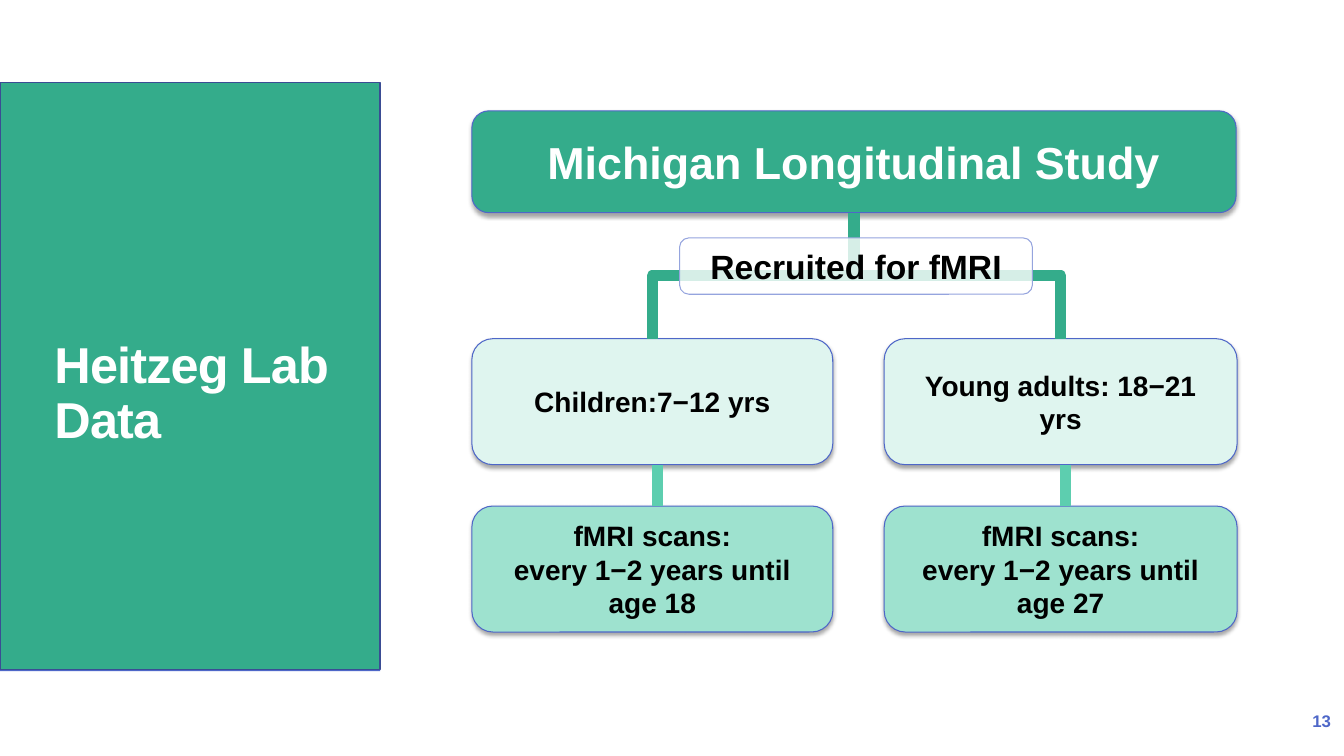
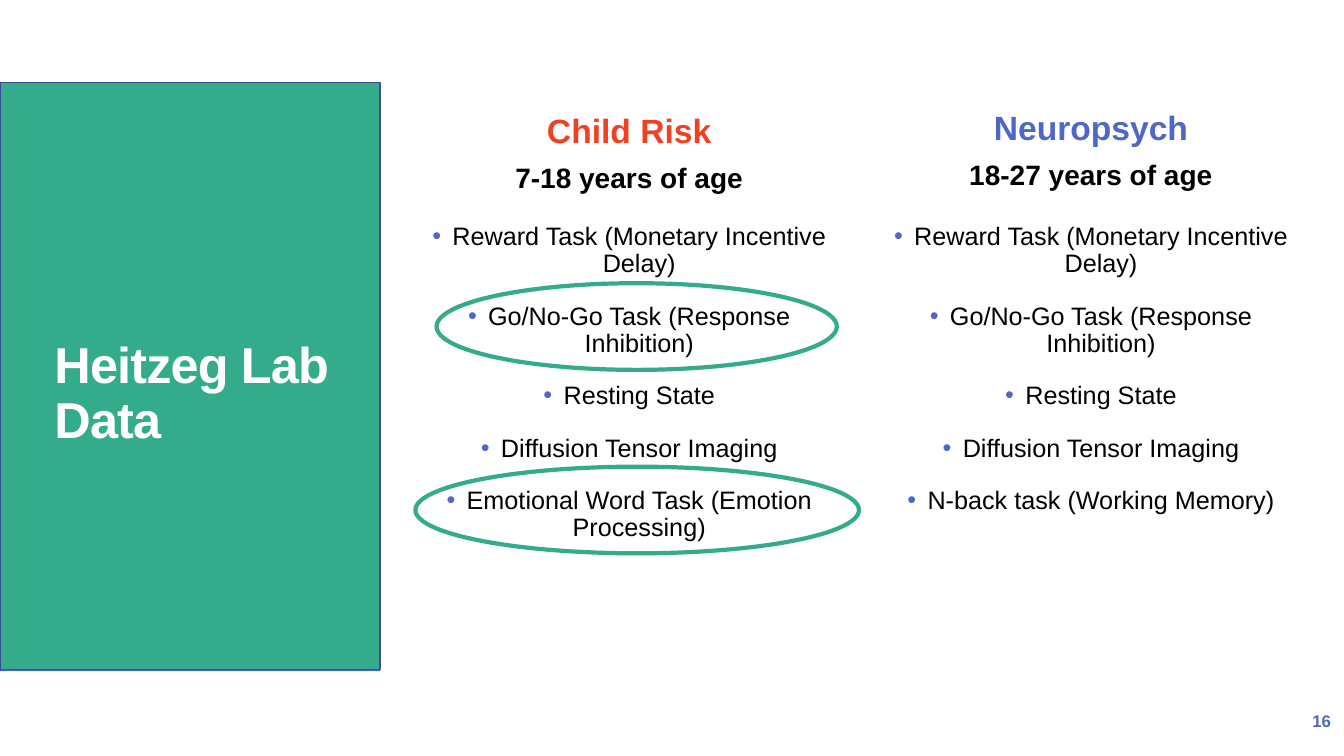
from lxml import etree
from pptx import Presentation
from pptx.dml.color import RGBColor
from pptx.enum.shapes import MSO_CONNECTOR, MSO_SHAPE
from pptx.enum.text import MSO_ANCHOR, MSO_AUTO_SIZE, PP_ALIGN
from pptx.oxml.ns import qn
from pptx.util import Inches, Pt

# Shared look
GREEN = RGBColor(0x34, 0xAC, 0x8B)
MID_GREEN = RGBColor(0x5D, 0xCE, 0xAF)
SOFT_GREEN = RGBColor(0x9E, 0xE2, 0xCF)
PALE_GREEN = RGBColor(0xDF, 0xF5, 0xEF)
BLUE = RGBColor(0x4E, 0x67, 0xC8)
DARK_BLUE = RGBColor(0x3A, 0x4C, 0x94)
LIGHT_BLUE = RGBColor(0x95, 0xA4, 0xDE)
RED = RGBColor(0xF1, 0x41, 0x24)
WHITE = RGBColor(0xFF, 0xFF, 0xFF)
BLACK = RGBColor(0, 0, 0)

TITLE_FONT = {"size": Pt(36), "bold": True}
HEADER_FONT = {"size": Pt(32), "bold": True}
HEADING_FONT = {"size": Pt(24), "bold": True}
BOX_FONT = {"size": Pt(20), "bold": True}
BULLET_FONT = {"size": Pt(18), "bold": False}
NUMBER_FONT = {"size": Pt(12), "bold": True}

TITLE = "Heitzeg Lab Data"
BULLET_INDENT = Inches(0.2)
SHARED_TASKS = [
    "Reward Task (Monetary Incentive Delay)",
    "Go/No-Go Task (Response Inhibition)",
    "Resting State",
    "Diffusion Tensor Imaging",
]


def add_xml(parent, tag, **attributes):
    return etree.SubElement(parent, qn(tag), attributes)


def set_values(target, values):
    for name, value in values.items():
        setattr(target, name, value)


def write_line(frame, index, text, font, color, **paragraph_format):
    """Write one paragraph, using the frame's empty first one for index 0."""
    paragraph = frame.add_paragraph() if index else frame.paragraphs[0]
    set_values(paragraph, {"alignment": PP_ALIGN.CENTER, **paragraph_format})
    run = paragraph.add_run()
    run.text = text
    set_values(run.font, {"name": "Arial", **font})
    run.font.color.rgb = color
    return paragraph


def add_box(slide, kind, at, fill=None, line=None, line_width=0.75):
    box = slide.shapes.add_shape(kind, *map(Inches, at))
    box.shadow.inherit = False
    if fill is None:
        box.fill.background()
    else:
        box.fill.solid()
        box.fill.fore_color.rgb = fill
    if line is None:
        box.line.fill.background()
    else:
        set_values(box.line, {"width": Pt(line_width)})
        box.line.color.rgb = line
    return box


def add_text(slide, at, anchor=MSO_ANCHOR.TOP):
    frame = slide.shapes.add_textbox(*map(Inches, at)).text_frame
    set_values(frame, {"word_wrap": True, "vertical_anchor": anchor})
    return frame


def add_shadow(box):
    effects = box.element.spPr.find(qn("a:effectLst"))
    shadow = add_xml(effects, "a:outerShdw", blurRad=str(Pt(3.1)), dist=str(Pt(1.8)),
                     dir="5400000", rotWithShape="0")
    add_xml(add_xml(shadow, "a:srgbClr", val="000000"), "a:alpha", val="35000")


def add_study_box(slide, at, fill, lines, font=BOX_FONT, color=BLACK):
    box = add_box(slide, MSO_SHAPE.ROUNDED_RECTANGLE, at, fill, BLUE)
    add_shadow(box)
    set_values(box.text_frame, {"word_wrap": True, "vertical_anchor": MSO_ANCHOR.MIDDLE})
    for index, text in enumerate(lines):
        write_line(box.text_frame, index, text, font, color)
    return box


def add_link(slide, kind, color, start, end):
    link = slide.shapes.add_connector(kind, *start, *end)
    link.line.width = Pt(8)
    link.line.color.rgb = color
    add_xml(link.element.spPr, "a:effectLst")
    return link


def add_branch(slide, parent, child):
    """Elbow going down from the parent's bottom to the child's top."""
    start_x, start_y = parent.left + parent.width // 2, parent.top + parent.height
    end_x, end_y = child.left + child.width // 2, child.top
    branch = add_link(slide, MSO_CONNECTOR.ELBOW, GREEN, (start_x, start_y), (end_x, end_y))
    branch.begin_connect(parent, 2)
    branch.end_connect(child, 0)
    # A vertical elbow is a horizontal one turned by a quarter about its centre
    drop, spread = end_y - start_y, abs(end_x - start_x)
    set_values(branch, {
        "left": (start_x + end_x - drop) // 2,
        "top": (start_y + end_y - spread) // 2,
        "width": drop,
        "height": spread,
    })
    frame = branch.element.spPr.find(qn("a:xfrm"))
    for flip in ("flipH", "flipV"):
        frame.attrib.pop(flip, None)
    if end_x > start_x:
        frame.set("rot", "16200000")
        frame.set("flipH", "1")
    else:
        frame.set("rot", "5400000")


def add_slide(deck, number):
    """Slide with the green title panel and the page number."""
    slide = deck.slides.add_slide(deck.slide_layouts[5])
    title = slide.shapes.title
    panel_edge = add_box(slide, MSO_SHAPE.RECTANGLE, (0, 0.83, 3.77, 5.83), BLUE)
    panel = add_box(slide, MSO_SHAPE.RECTANGLE, (0, 0.82, 3.77, 5.82), GREEN, DARK_BLUE, 0.85)
    for band in (panel_edge, panel):
        title.element.addprevious(band.element)

    set_values(title, {"left": Inches(0.44), "top": Inches(1.4),
                       "width": Inches(3.22), "height": Inches(5.03)})
    set_values(title.text_frame, {"word_wrap": True, "auto_size": MSO_AUTO_SIZE.NONE,
                                  "vertical_anchor": MSO_ANCHOR.MIDDLE})
    heading = write_line(title.text_frame, 0, TITLE, TITLE_FONT, WHITE,
                         alignment=PP_ALIGN.LEFT, line_spacing=0.9)
    heading.runs[0]._r.get_or_add_rPr().set("spc", "-60")

    page = add_text(slide, (11.63, 6.95, 1.67, 0.4), MSO_ANCHOR.MIDDLE)
    write_line(page, 0, str(number), NUMBER_FONT, BLUE, alignment=PP_ALIGN.RIGHT)
    return slide


def build_study(deck):
    slide = add_slide(deck, 13)
    study = add_study_box(slide, (4.68, 1.1, 7.58, 1.01), GREEN,
                          ["Michigan Longitudinal Study"], HEADER_FONT, WHITE)

    # One column per age group: group box, link, scan box
    groups = [
        (4.68, 3.58, "Children:7−12 yrs", 18),
        (8.77, 3.5, "Young adults: 18−21 yrs", 27),
    ]
    group_top, scan_top, height = 3.36, 5.02, 1.25
    for left, width, group_name, last_age in groups:
        group = add_study_box(slide, (left, group_top, width, height), PALE_GREEN, [group_name])
        add_study_box(slide, (left, scan_top, width, height), SOFT_GREEN,
                      ["fMRI scans:", f"every 1−2 years until age {last_age}"])
        link_x = Inches(left + width / 2 + 0.05)
        add_link(slide, MSO_CONNECTOR.STRAIGHT, MID_GREEN,
                 (link_x, Inches(group_top + height)), (link_x, Inches(scan_top)))
        add_branch(slide, study, group)

    # Label over the branches
    label = add_box(slide, MSO_SHAPE.ROUNDED_RECTANGLE, (6.74, 2.36, 3.5, 0.56),
                    WHITE, LIGHT_BLUE)
    fill_color = label.element.spPr.find(qn("a:solidFill")).find(qn("a:srgbClr"))
    add_xml(fill_color, "a:alpha", val="80000")
    set_values(label.text_frame, {"word_wrap": True, "vertical_anchor": MSO_ANCHOR.TOP})
    write_line(label.text_frame, 0, "Recruited for fMRI", HEADING_FONT, BLACK)


def add_task_column(slide, left, top, name, color, ages, tasks):
    heading = add_text(slide, (left, top, 4.42, 0.87))
    lines = [(name, HEADING_FONT, color), (ages, BOX_FONT, BLACK)]
    for index, (text, font, text_color) in enumerate(lines):
        write_line(heading, index, text, font, text_color,
                   line_spacing=0.8, space_before=Pt(12))

    task_list = add_text(slide, (left, 2.17, 4.42, 4.03))
    for index, task in enumerate(tasks):
        paragraph = write_line(task_list, index, task, BULLET_FONT, BLACK, line_spacing=0.9,
                               space_before=Pt(12), space_after=Pt(6))
        properties = paragraph._p.get_or_add_pPr()
        properties.set("marL", str(BULLET_INDENT))
        properties.set("indent", str(-BULLET_INDENT))
        add_xml(add_xml(properties, "a:buClr"), "a:srgbClr", val=str(BLUE))
        add_xml(properties, "a:buFont", typeface="Arial")
        add_xml(properties, "a:buChar", char="•")


def build_tasks(deck):
    slide = add_slide(deck, 16)
    add_task_column(slide, 4.03, 1.12, "Child Risk", RED, "7-18 years of age",
                    SHARED_TASKS + ["Emotional Word Task (Emotion Processing)"])
    add_task_column(slide, 8.61, 1.09, "Neuropsych", BLUE, "18-27 years of age",
                    SHARED_TASKS + ["N-back task (Working Memory)"])

    # Rings around the two highlighted tasks
    for ring in ((4.33, 2.81, 3.97, 0.86), (4.12, 4.63, 4.4, 0.86)):
        add_box(slide, MSO_SHAPE.OVAL, ring, line=GREEN, line_width=3)


def main():
    deck = Presentation()
    set_values(deck, {"slide_width": Inches(13.33), "slide_height": Inches(7.5)})
    build_study(deck)
    build_tasks(deck)
    deck.save("out.pptx")


if __name__ == "__main__":
    main()
